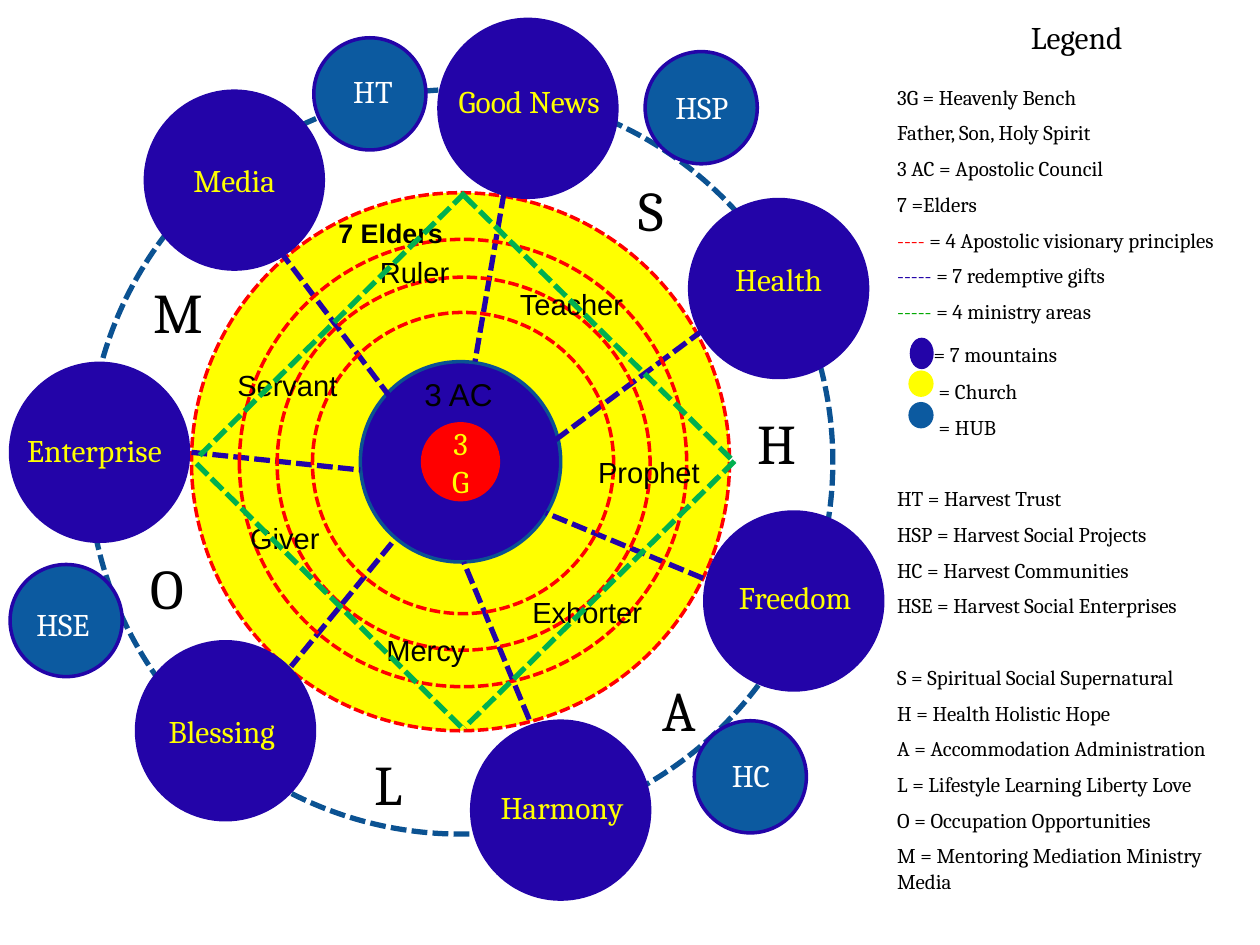
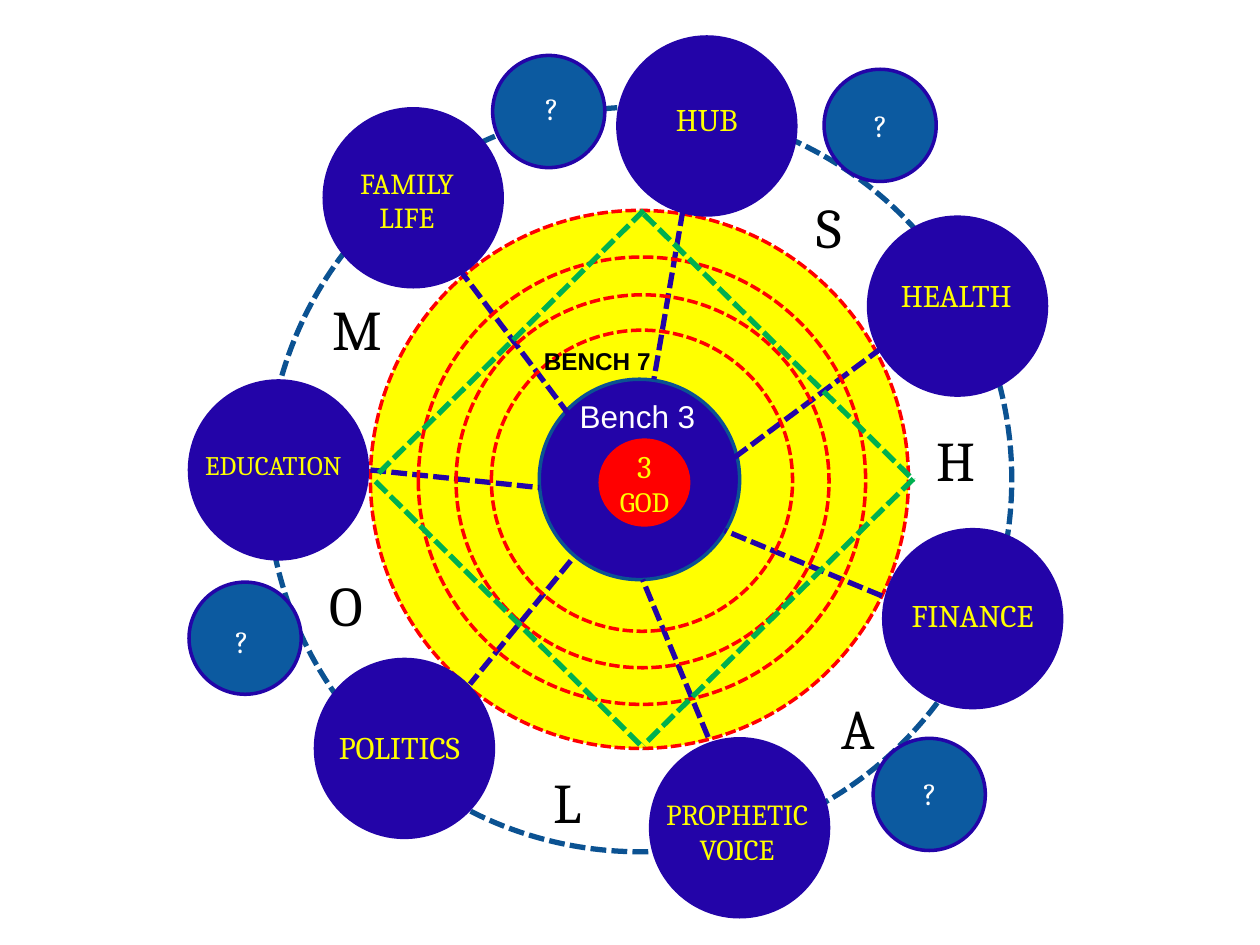
from typing import NamedTuple

import pptx
import pptx.dml.color
import pptx.enum.dml
import pptx.enum.shapes
import pptx.enum.text
import pptx.oxml
import pptx.util

# Scale: 100 px to the inch
PX = 9144
NAVY, BLUE, TEAL = "2304A8", "0C5AA0", "0B5292"
GOLD, RED, GREEN = "FFFF00", "FF0000", "00B050"
LEAF, BLACK, WHITE = "00A800", "000000", "FFFFFF"
SERIF, SANS = "Cambria", "Arial"
PEAK, HUB = 144, 89
MID = pptx.enum.text.PP_ALIGN.CENTER


class Disk(NamedTuple):
    x: int
    y: int
    wide: int
    high: int
    fill: str | None = None
    edge: str | None = None
    thick: float = 2
    dash: bool = False


class Line(NamedTuple):
    x1: int
    y1: int
    x2: int
    y2: int
    hue: str


class Run(NamedTuple):
    text: str
    size: float = 18
    hue: str = BLACK
    font: str = SERIF
    bold: bool = False


class Label(NamedTuple):
    x: int
    y: int
    wide: int
    high: int
    runs: list[Run]


class Row(NamedTuple):
    text: str
    mark: str = ""
    hue: str = BLACK
    above: float = 0
    below: float = 6
    left: int = 0


class Chart(NamedTuple):
    dx: int
    dy: int
    core: Disk
    heart: list[Run]
    inset: int
    names: list[Label]
    hubs: list[str]
    notes: list[Label]


# Shared parts of the wheel
BASE = [
    Disk(70, 71, 591, 591, WHITE, TEAL, 3, True),
    Disk(152, 153, 427, 427, GOLD, RED, 2, True),
    Disk(286, 287, 159, 159, NAVY, TEAL),
]
PEAKS = [(347, 14), (558, 405), (373, 571), (7, 287),
         (114, 71), (107, 508), (546, 157)]
SPOKES = [
    Line(400, 153, 377, 287, NAVY), Line(558, 262, 441, 349, NAVY),
    Line(222, 199, 311, 317, NAVY), Line(152, 359, 286, 373, NAVY),
    Line(558, 459, 433, 407, NAVY), Line(420, 571, 368, 446, NAVY),
    Line(311, 431, 231, 529, NAVY),
]
RINGS = [Disk(x, x, d, d, None, RED, 2, True)
         for x, d in ((248, 239), (220, 296), (190, 355))]
AREAS = [
    Line(369, 153, 156, 364, GREEN), Line(156, 368, 369, 580, GREEN),
    Line(369, 156, 583, 367, GREEN), Line(583, 366, 369, 577, GREEN),
]
# Disk corner, then label corner
HUBS = [((512, 41), (533, 70)), ((8, 448), (26, 480)),
        ((551, 572), (572, 600)), ((249, 30), (272, 57))]
SHALOM = [Label(x, y, 87, 51, [Run(c, 32)]) for c, x, y in (
    ("S", 473, 139), ("H", 573, 324), ("A", 496, 536),
    ("L", 265, 595), ("O", 89, 439), ("M", 98, 220))]


def peak(text: str, x: int, y: int, size: float = 18) -> Label:
    return Label(x, y, 134, 42, [Run(text, size, GOLD)])


def gift(text: str, x: int, y: int, wide: int = 88) -> Label:
    return Label(x, y, wide, 27, [Run(text, 16.6, BLACK, SANS)])


FIRST = Chart(
    0, 0, Disk(334, 335, 63, 63, RED), [Run("3 G", 18, GOLD)], 10,
    [peak("Good News", 353, 65), peak("Health", 551, 206),
     peak("Freedom", 564, 459), peak("Harmony", 379, 625),
     peak("Blessing", 109, 565), peak("Enterprise", 8, 342),
     peak("Media", 119, 128)],
    ["HSP", "HSE", "HC", "HT"],
    [Label(297, 298, 134, 35, [Run("3 AC", 18, BLACK, SANS)]),
     gift("Ruler", 285, 202), gift("Servant", 184, 292),
     gift("Giver", 182, 413), gift("Mercy", 294, 502),
     gift("Exhorter", 414, 472, 104), gift("Prophet", 471, 361),
     gift("Teacher", 401, 227, 105),
     Label(266, 172, 88, 27, [Run("7 Elders", 15.3, BLACK, SANS, True)])],
)
NEXT = Chart(
    142, 14, Disk(333, 334, 73, 70, RED),
    [Run("3 ", 18, GOLD), Run("GOD", 16, GOLD)], 0,
    [peak("HUB", 352, 65), peak("HEALTH", 550, 205),
     peak("FINANCE", 563, 459), peak("PROPHETIC\nVOICE", 376, 618, 16.6),
     peak("POLITICS", 108, 564), peak("EDUCATION", 8, 342, 15.3),
     peak("FAMILY\nLIFE", 114, 117, 16.6)],
    ["?"] * 4,
    [Label(297, 301, 134, 35, [Run("Bench 3", 18, WHITE, SANS)]),
     Label(288, 261, 88, 27, [Run("BENCH 7", 13.9, BLACK, SANS, True)])],
)

# Legend
GAP = 20.4
ROWS = [
    Row("3G = Heavenly Bench", above=16.5),
    Row("Father, Son, Holy Spirit"),
    Row("3 AC = Apostolic Council"),
    Row("7 =Elders"),
    Row(" = 4 Apostolic visionary principles", "----", RED),
    Row(" = 7 redemptive gifts", "-----", NAVY),
    Row(" = 4 ministry areas", "-----", LEAF),
    Row("= 7 mountains", above=4, below=7, left=29),
    Row("= Church", left=33),
    Row("= HUB", left=33),
    Row("HT = Harvest Trust", above=GAP),
    Row("HSP = Harvest Social Projects"),
    Row("HC = Harvest Communities"),
    Row("HSE = Harvest Social Enterprises"),
    Row("S = Spiritual Social Supernatural", above=GAP),
    Row("H = Health Holistic Hope"),
    Row("A = Accommodation Administration"),
    Row("L = Lifestyle Learning Liberty Love"),
    Row("O = Occupation Opportunities"),
    Row("M = Mentoring Mediation Ministry Media"),
]
KEYS = [Disk(722, 268, 19, 25, NAVY), Disk(721, 294, 20, 21, GOLD),
        Disk(721, 319, 20, 21, BLUE)]


# Drawing tools
def px(*vals: int) -> list[int]:
    return [v * PX for v in vals]


def tint(color, code: str) -> None:
    color.rgb = pptx.dml.color.RGBColor.from_string(code)


def stroke(line, hue: str, thick: float, dash: bool) -> None:
    line.fill.solid()
    tint(line.color, hue)
    line.width = pptx.util.Pt(thick)
    if dash:
        line.dash_style = pptx.enum.dml.MSO_LINE.SQUARE_DOT


def draw(slide, disk: Disk):
    shape = slide.shapes.add_shape(
        pptx.enum.shapes.MSO_SHAPE.OVAL,
        *px(disk.x, disk.y, disk.wide, disk.high))
    shape.shadow.inherit = False
    if disk.fill:
        shape.fill.solid()
        tint(shape.fill.fore_color, disk.fill)
    else:
        shape.fill.background()
    if disk.edge:
        stroke(shape.line, disk.edge, disk.thick, disk.dash)
    else:
        shape.line.fill.background()
    return shape


def join(slide, line: Line) -> None:
    link = slide.shapes.add_connector(
        pptx.enum.shapes.MSO_CONNECTOR.STRAIGHT,
        *px(line.x1, line.y1, line.x2, line.y2))
    stroke(link.line, line.hue, 3, True)
    props = link._element.spPr
    props.append(pptx.oxml.parse_xml(
        '<a:effectLst xmlns:a='
        '"http://schemas.openxmlformats.org/drawingml/2006/main"/>'))


def write(para, run: Run) -> None:
    for i, part in enumerate(run.text.split("\n")):
        if i:
            para.add_line_break()
        bit = para.add_run()
        bit.text = part
        bit.font.size = pptx.util.Pt(run.size)
        bit.font.name = run.font
        bit.font.bold = run.bold
        tint(bit.font.color, run.hue)


def frame(shape, inset: int = 0):
    text = shape.text_frame
    text.word_wrap = True
    text.margin_left = text.margin_right = inset * PX
    text.margin_top = text.margin_bottom = inset * PX // 2
    return text


def put(slide, label: Label) -> None:
    box = slide.shapes.add_textbox(
        *px(label.x, label.y, label.wide, label.high))
    para = frame(box).paragraphs[0]
    para.alignment = MID
    for run in label.runs:
        write(para, run)


def wheel(slide, chart: Chart) -> None:
    def move(item):
        return item._replace(x=item.x + chart.dx, y=item.y + chart.dy)

    def shift(line: Line) -> Line:
        return Line(line.x1 + chart.dx, line.y1 + chart.dy,
                    line.x2 + chart.dx, line.y2 + chart.dy, line.hue)

    # Church, council and core
    for disk in BASE:
        draw(slide, move(disk))
    text = frame(draw(slide, move(chart.core)), chart.inset)
    text.vertical_anchor = pptx.enum.text.MSO_ANCHOR.MIDDLE
    para = text.paragraphs[0]
    para.alignment = MID
    for run in chart.heart:
        write(para, run)
    # Mountains, spokes and rings
    for x, y in PEAKS:
        draw(slide, move(Disk(x, y, PEAK, PEAK, NAVY)))
    for line in SPOKES:
        join(slide, shift(line))
    for disk in RINGS:
        draw(slide, move(disk))
    for label in chart.names:
        put(slide, move(label))
    # Outer hubs
    for (spot, tag), name in zip(HUBS, chart.hubs):
        draw(slide, move(Disk(*spot, HUB, HUB, BLUE, NAVY)))
        put(slide, move(Label(*tag, 48, 30, [Run(name, 18, WHITE)])))
    # Letters, notes and ministry areas
    for label in SHALOM + chart.notes:
        put(slide, move(label))
    for line in AREAS:
        join(slide, shift(line))


def legend(slide) -> None:
    text = frame(slide.shapes.add_textbox(*px(712, 14, 285, 736)))
    head = text.paragraphs[0]
    head.alignment = MID
    write(head, Run("Legend"))
    for row in ROWS:
        para = text.add_paragraph()
        para.space_before = pptx.util.Pt(row.above)
        para.space_after = pptx.util.Pt(row.below)
        if row.left:
            props = para._p.get_or_add_pPr()
            props.set("marL", str(row.left * PX))
            props.set("indent", "0")
        if row.mark:
            write(para, Run(row.mark, 12, row.hue))
        write(para, Run(row.text, 12))
    for disk in KEYS:
        draw(slide, disk)


def main() -> None:
    deck = pptx.Presentation()
    deck.slide_width, deck.slide_height = px(1000, 750)
    blank = deck.slide_layouts[6]
    slide = deck.slides.add_slide(blank)
    wheel(slide, FIRST)
    legend(slide)
    wheel(deck.slides.add_slide(blank), NEXT)
    deck.save("out.pptx")


if __name__ == "__main__":
    main()
